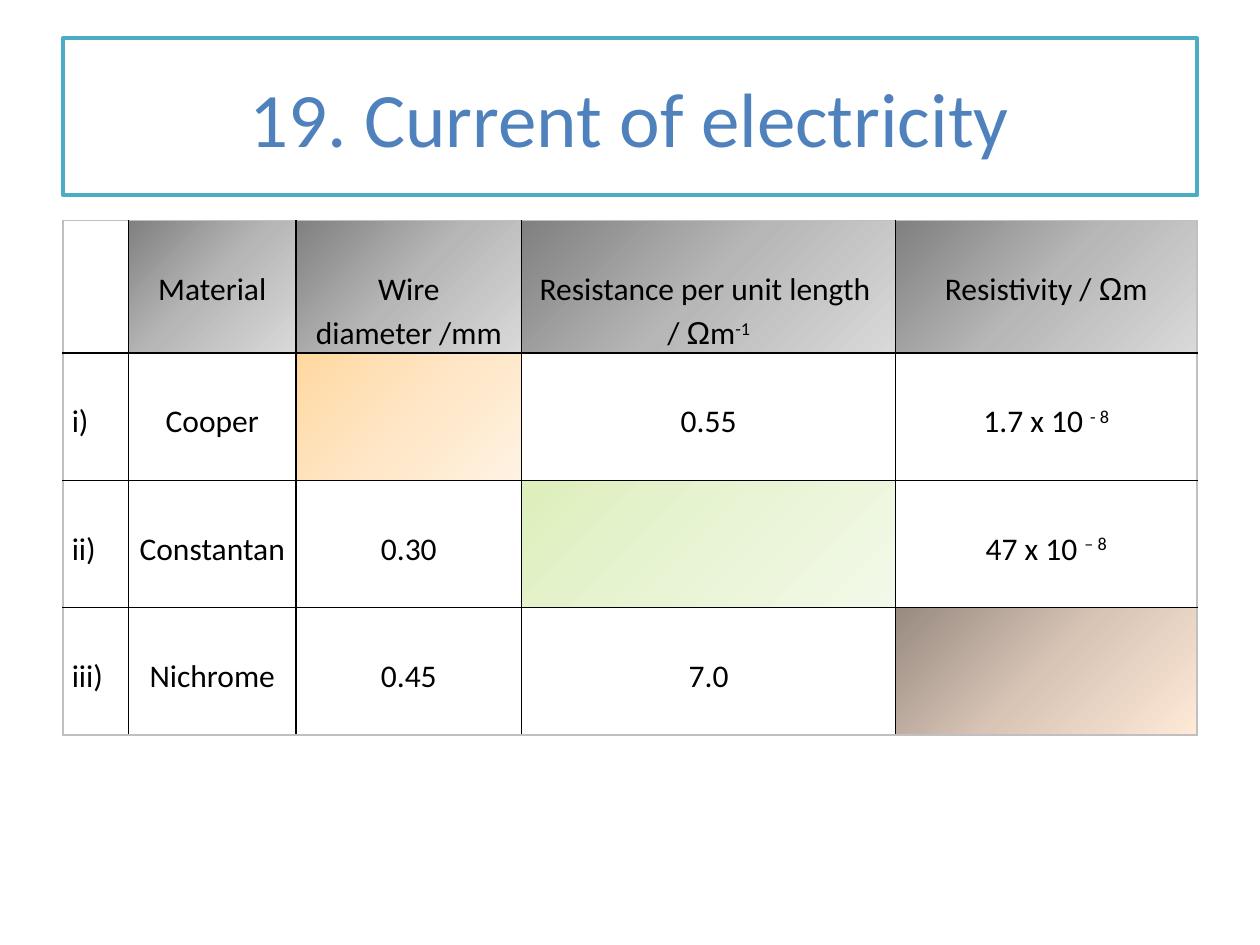
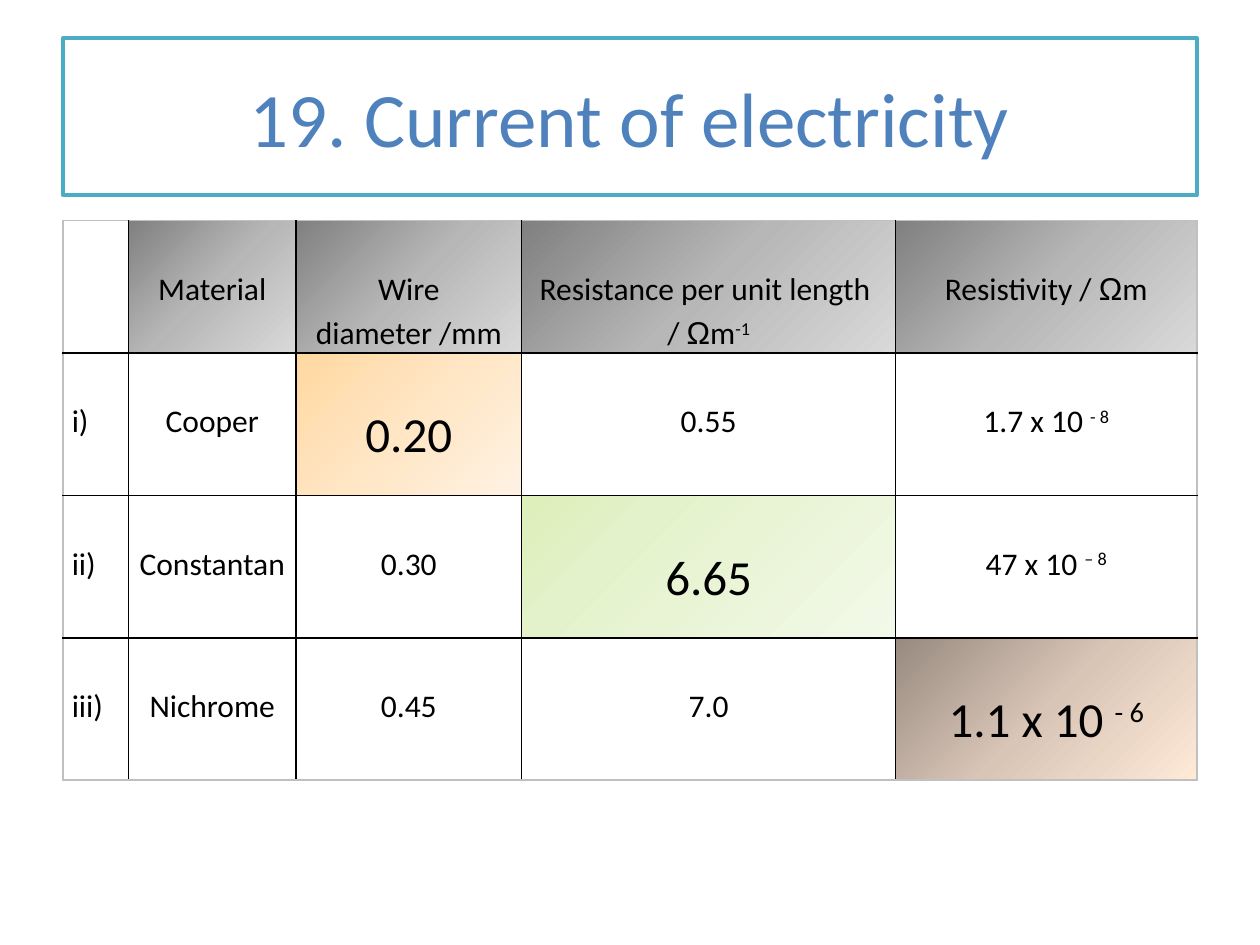
from itertools import groupby

from pptx import Presentation
from pptx.dml.color import RGBColor
from pptx.enum.shapes import MSO_SHAPE as Shape
from pptx.enum.text import MSO_ANCHOR as Anchor, PP_ALIGN as Align
from pptx.oxml import parse_xml
from pptx.oxml.ns import nsdecls
from pptx.util import Inches, Pt

COLORS = {
    "white": "FFFFFF",
    "black": "000000",
    "title": "4F81BD",
    "title_frame": "4BACC6",
    "table_frame": "C0C0C0",
}
GRADIENTS = {
    "header": ("808080", "B7B7B7", "D9D9D9"),
    "orange": ("FFD8A0", "FFE6C5", "FFF2E3"),
    "green": ("DDEFBB", "E8F4D4", "F3F9E9"),
    "brown": ("988A80", "D8C5B6", "FFEAD8"),
}
FONT, SYMBOL_FONT = "Calibri", "Arial"
TITLE = "19. Current of electricity"
TITLE_BOX = (0.5, 0.3, 9, 1.25)
TABLE_LEFT, TABLE_TOP = 0.5, 1.75
COLUMN_WIDTHS = (0.52, 1.33, 1.79, 2.97, 2.39)
HEADER_HEIGHT = 1.01

# "^" starts a superscript, a line break starts a paragraph.
ROWS = (
    ("", "Material", "Wire diameter /mm",
     "Resistance per unit length \n/ Ωm^-1", "Resistivity / Ωm"),
    ("i)", "Cooper", "", "0.55", "1.7 x 10 ^- 8"),
    ("ii)", "Constantan", "0.30", "", "47 x 10 ^– 8"),
    ("iii)", "Nichrome", "0.45", "7.0", ""),
)
UNKNOWN_FILLS = {(1, 2): "orange", (2, 3): "green", (3, 4): "brown"}
ANSWERS = {(1, 2): "0.20", (2, 3): "6.65", (3, 4): "1.1 x 10 ^- 6"}


def rgb(name):
    return RGBColor.from_string(COLORS[name])


def style_paragraph(paragraph, size, color, alignment):
    paragraph.alignment = alignment
    paragraph.font.name = FONT
    paragraph.font.size = Pt(size)
    paragraph.font.color.rgb = rgb(color)


def add_title(slide, left, top, width, height):
    shape = slide.shapes.add_shape(
        Shape.RECTANGLE, Inches(left), Inches(top), Inches(width), Inches(height))
    shape.shadow.inherit = False
    shape.fill.solid()
    shape.fill.fore_color.rgb = rgb("white")
    shape.line.color.rgb = rgb("title_frame")
    shape.line.width = Pt(2)
    frame = shape.text_frame
    frame.word_wrap = True
    frame.vertical_anchor = Anchor.MIDDLE
    frame.text = TITLE
    style_paragraph(frame.paragraphs[0], 44, "title", Align.CENTER)


def write_runs(paragraph, text):
    """Set omegas in the symbol font and raise what follows "^"."""
    for level, part in enumerate(text.split("^")):
        for is_symbol, letters in groupby(part, lambda letter: letter == "Ω"):
            run = paragraph.add_run()
            run.text = "".join(letters)
            if is_symbol:
                run.font.name = SYMBOL_FONT
            if level:
                run.font._element.set("baseline", "30000")


def write_cell(cell, text, size, alignment):
    cell.margin_left = cell.margin_right = Inches(0.07)
    cell.margin_top = Inches(0.35)
    cell.margin_bottom = 0
    frame = cell.text_frame
    for number, line in enumerate(text.split("\n")):
        paragraph = frame.add_paragraph() if number else frame.paragraphs[0]
        style_paragraph(paragraph, size, "black", alignment)
        paragraph.line_spacing = 1.15
        write_runs(paragraph, line)


def fill_cell(cell, gradient):
    if gradient is None:
        cell.fill.background()
        return
    stops = "".join(
        f'<a:gs pos="{number * 50000}"><a:srgbClr val="{color}"/></a:gs>'
        for number, color in enumerate(GRADIENTS[gradient]))
    cell._tc.get_or_add_tcPr().append(parse_xml(
        f'<a:gradFill {nsdecls("a")} rotWithShape="1"><a:gsLst>{stops}</a:gsLst>'
        '<a:lin ang="2700000" scaled="0"/></a:gradFill>'))


def border_cell(cell, row, column):
    """Draw black inner lines and a grey line round the table."""
    on_frame = {
        "lnL": column == 0,
        "lnR": column == len(COLUMN_WIDTHS) - 1,
        "lnT": row == 0,
        "lnB": row == len(ROWS) - 1,
    }
    properties = cell._tc.get_or_add_tcPr()
    for position, (side, outer) in enumerate(on_frame.items()):
        color = COLORS["table_frame" if outer else "black"]
        properties.insert(position, parse_xml(
            f'<a:{side} {nsdecls("a")} w="{Pt(1)}"><a:solidFill>'
            f'<a:srgbClr val="{color}"/></a:solidFill></a:{side}>'))


def add_wire_table(slide, left, top, body_height, answers):
    heights = [HEADER_HEIGHT] + [body_height] * (len(ROWS) - 1)
    table = slide.shapes.add_table(
        len(ROWS), len(COLUMN_WIDTHS), Inches(left), Inches(top),
        Inches(sum(COLUMN_WIDTHS)), Inches(sum(heights))).table
    table.horz_banding = table.first_row = False
    for column, width in zip(table.columns, COLUMN_WIDTHS):
        column.width = Inches(width)
    for row, height in zip(table.rows, heights):
        row.height = Inches(height)
    for row, texts in enumerate(ROWS):
        for column, text in enumerate(texts):
            cell = table.cell(row, column)
            place = (row, column)
            is_header = row == 0 and column > 0
            write_cell(cell, answers.get(place, text), 28 if place in answers else 18,
                       Align.CENTER if column else Align.LEFT)
            fill_cell(cell, "header" if is_header else UNKNOWN_FILLS.get(place))
            border_cell(cell, row, column)


def add_wire_slide(presentation, body_height, answers):
    slide = presentation.slides.add_slide(presentation.slide_layouts[6])
    add_title(slide, *TITLE_BOX)
    add_wire_table(slide, TABLE_LEFT, TABLE_TOP, body_height, answers)


def main():
    presentation = Presentation()
    presentation.slide_width = Inches(10)
    presentation.slide_height = Inches(7.5)
    add_wire_slide(presentation, 1.01, {})
    add_wire_slide(presentation, 1.13, ANSWERS)
    presentation.save("out.pptx")


if __name__ == "__main__":
    main()
